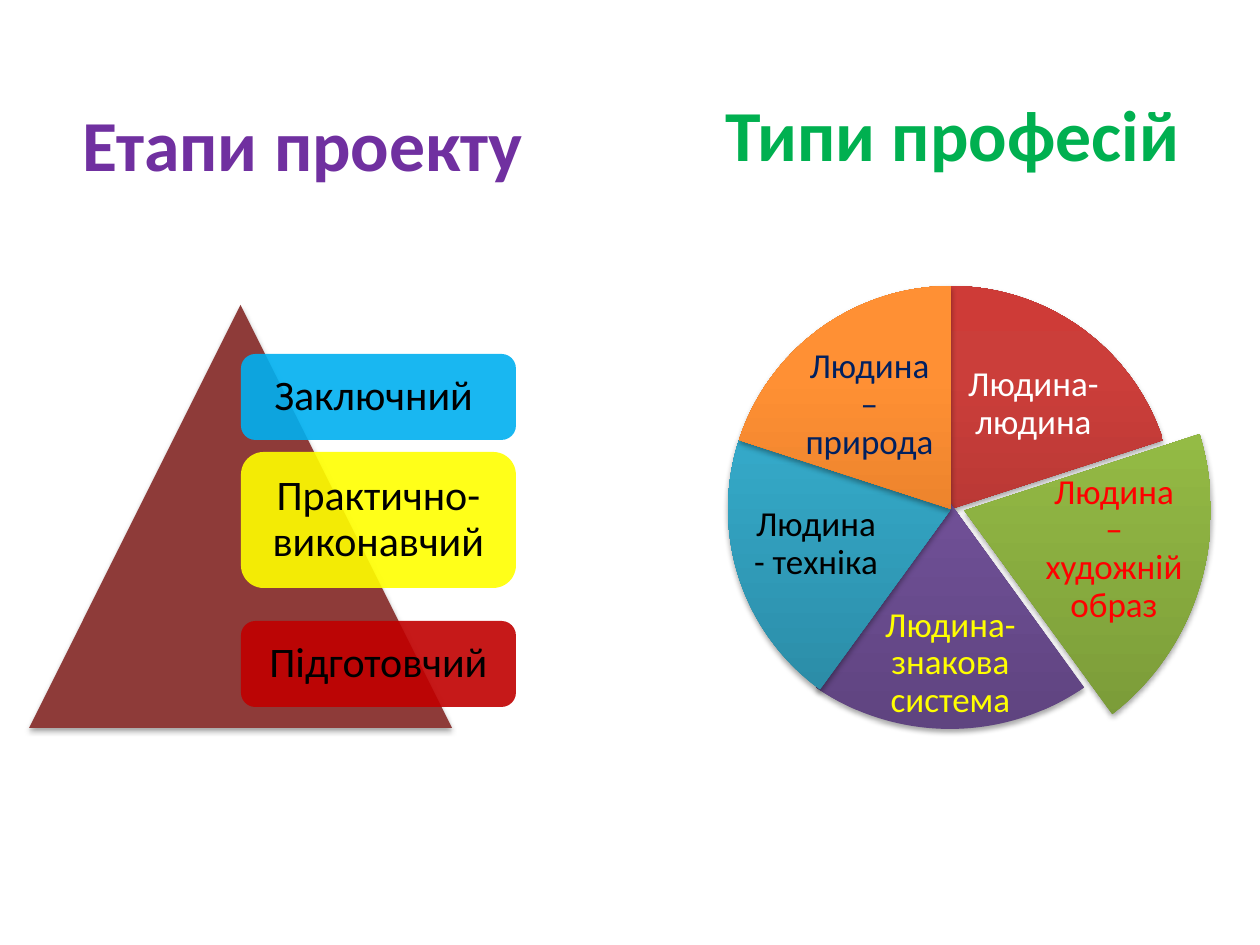
from dataclasses import dataclass

from lxml.etree import SubElement as Sub
from pptx import Presentation
from pptx.dml.color import RGBColor as RGB
from pptx.enum.shapes import MSO_SHAPE as Kind
from pptx.enum.text import MSO_ANCHOR as Anchor, PP_ALIGN as Align
from pptx.oxml.ns import qn
from pptx.util import Emu, Pt

DPI = 126
FONT = "Calibri"
TURN, START = 216, 162  # full circle and twelve o'clock, in pie adjust units

BLACK = RGB(0x00, 0x00, 0x00)
WHITE = RGB(0xFF, 0xFF, 0xFF)
PURPLE = RGB(0x70, 0x30, 0xA0)
GREEN = RGB(0x00, 0xB0, 0x50)
NAVY = RGB(0x00, 0x20, 0x60)
YELLOW = RGB(0xFF, 0xFF, 0x00)
RED = RGB(0xFF, 0x00, 0x00)
BLUE = RGB(0x00, 0xB0, 0xF0)
CRIMSON = RGB(0xC0, 0x00, 0x00)
BROWN = RGB(0x8E, 0x3B, 0x39)

Box = tuple[int, int, int, int]


@dataclass
class Slice:
    text: str
    ink: RGB
    shades: tuple[str, str, str]
    pie: Box
    label: Box


@dataclass
class Stage:
    text: str
    fill: RGB
    top: int
    height: int


ROUND: Box = (728, 286, 446, 446)
SLICES = [
    Slice("Людина-людина", WHITE, ("9C2F2D", "CB3E3A", "CE3B37"),
          ROUND, (958, 353, 151, 103)),
    Slice("Людина – художній образ", RED, ("779737", "9BC348", "9DC746"),
          (718, 256, 493, 509), (1041, 486, 146, 127)),
    Slice("Людина- знакова система", YELLOW, ("5F4480", "7B58A6", "7C57A8"),
          (718, 277, 464, 452), (868, 615, 165, 97)),
    Slice("Людина - техніка", BLACK, ("2A88A2", "37B1D2", "34B4D6"),
          ROUND, (750, 488, 132, 112)),
    Slice("Людина – природа", NAVY, ("CC6E20", "FF9034", "FF9136"),
          ROUND, (794, 354, 151, 103)),
]
STAGES = [
    Stage("Заключний ", BLUE, 354, 86),
    Stage("Практично-виконавчий", YELLOW, 452, 136),
    Stage("Підготовчий", CRIMSON, 621, 86),
]


def px(n: int) -> Emu:
    return Emu(round(n * 914400 / DPI))


def place(box: Box) -> list[Emu]:
    return [px(n) for n in box]


def write(shape, text: str, size: int, ink: RGB, inset: int,
          bold: bool = False, line: float = 1.0) -> None:
    """Put one centred paragraph in a shape."""
    frame = shape.text_frame
    frame.word_wrap = True
    frame.vertical_anchor = Anchor.MIDDLE
    for side in ("left", "right", "top", "bottom"):
        setattr(frame, f"margin_{side}", px(inset))
    para = frame.paragraphs[0]
    para.alignment, para.line_spacing = Align.CENTER, line
    run = para.add_run()
    run.text = text
    form = {"name": FONT, "size": Pt(size), "bold": bold}
    for key, value in form.items():
        setattr(run.font, key, value)
    run.font.color.rgb = ink


def head(shape, text: str, ink: RGB) -> None:
    write(shape, text, 41, ink, 12, bold=True)


def draw(group, kind: Kind, box: Box):
    shape = group.shapes.add_shape(kind, *place(box))
    shape.shadow.inherit = False
    shape.line.fill.background()
    return shape


def shade(shape) -> None:
    """Add a soft shadow below the shape."""
    effects = shape._element.spPr.find(qn("a:effectLst"))
    outer = Sub(effects, qn("a:outerShdw"), blurRad="40000", dist="23000",
                dir="5400000", rotWithShape="0")
    tone = Sub(outer, qn("a:srgbClr"), val="000000")
    Sub(tone, qn("a:alpha"), val="35000")


def blend(shape, shades: tuple[str, str, str]) -> None:
    """Fill with three stops that run from bottom to top."""
    shape.fill.gradient()
    grad = shape._element.spPr.find(qn("a:gradFill"))
    for part in list(grad):
        grad.remove(part)
    stops = Sub(grad, qn("a:gsLst"))
    for at, tone in zip((0, 80000, 100000), shades):
        Sub(Sub(stops, qn("a:gs"), pos=str(at)), qn("a:srgbClr"), val=tone)
    Sub(grad, qn("a:lin"), ang="16200000", scaled="0")


def draw_slice(group, part: Slice, index: int) -> None:
    pie = draw(group, Kind.PIE, part.pie)
    step = TURN / len(SLICES)
    for i in range(2):
        pie.adjustments[i] = round((START + (index + i) * step) % TURN, 1)
    blend(pie, part.shades)
    shade(pie)
    label = group.shapes.add_textbox(*place(part.label))
    write(label, part.text, 20, part.ink, 4, line=0.9)


def draw_stage(group, stage: Stage) -> None:
    card = draw(group, Kind.ROUNDED_RECTANGLE,
                (241, stage.top, 275, stage.height))
    card.fill.solid()
    card.fill.fore_color.rgb = stage.fill
    tone = card._element.spPr.find(qn("a:solidFill"))[0]
    Sub(tone, qn("a:alpha"), val="90000")
    write(card, stage.text, 24, BLACK, 17, line=0.9)


def main() -> None:
    deck = Presentation()
    deck.slide_width, deck.slide_height = px(1260), px(945)
    slide = deck.slides.add_slide(deck.slide_layouts[5])
    shapes = slide.shapes

    # Left heading
    title = shapes.title
    sides = ("left", "top", "width", "height")
    for key, value in zip(sides, place((49, 78, 508, 129))):
        setattr(title, key, value)
    head(title, "Етапи проекту", PURPLE)

    # Wheel of profession types
    wheel = shapes.add_group_shape()
    for index, part in enumerate(SLICES):
        draw_slice(wheel, part, index)

    # Right heading
    head(shapes.add_textbox(*place((699, 59, 508, 147))),
         "Типи професій", GREEN)

    # Pyramid of project stages
    stack = shapes.add_group_shape()
    peak = draw(stack, Kind.ISOSCELES_TRIANGLE, (29, 305, 423, 423))
    peak.fill.solid()
    peak.fill.fore_color.rgb = BROWN
    shade(peak)
    for stage in STAGES:
        draw_stage(stack, stage)

    deck.save("out.pptx")


if __name__ == "__main__":
    main()
